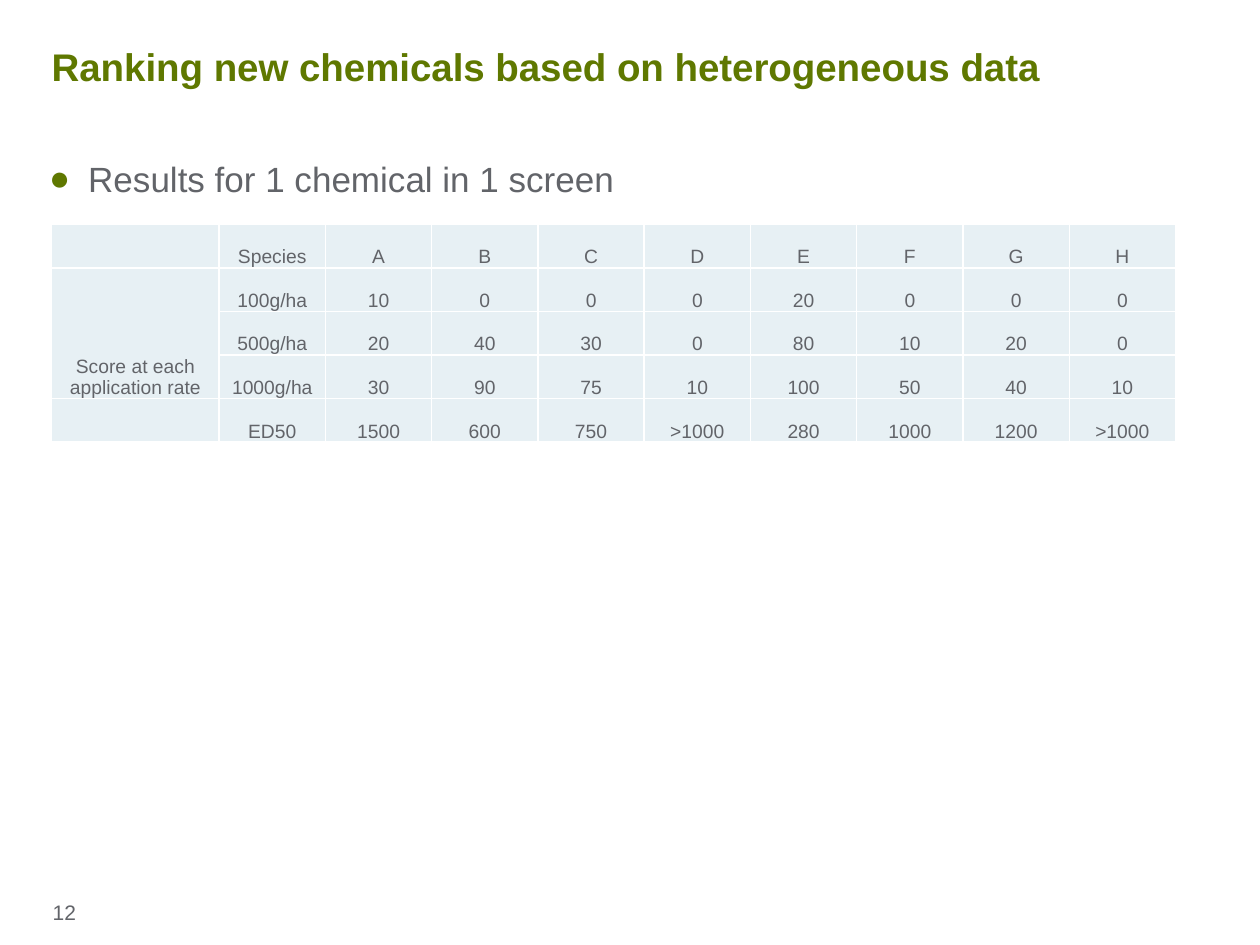
"""Build the slide that ranks new chemicals from one screen."""
from dataclasses import dataclass

from lxml.etree import SubElement
from pptx import Presentation
from pptx.dml.color import RGBColor
from pptx.enum.text import MSO_ANCHOR, MSO_AUTO_SIZE, PP_ALIGN
from pptx.oxml.ns import qn
from pptx.util import Inches, Pt

WIDE, HIGH = Inches(10), Inches(7.5)


@dataclass(frozen=True)
class Theme:
    """Colours, font and type sizes."""
    green: str = "5F7800"
    grey: str = "626469"
    pale: str = "E7F0F4"
    white: str = "FFFFFF"
    font: str = "Arial"
    head: int = 22
    body: int = 20
    foot: int = 12
    cell: int = 11


@dataclass(frozen=True)
class Box:
    """A place in percent of the slide's width and height."""
    left: float
    top: float
    width: float
    height: float

    def place(self) -> tuple:
        """Return left, top, width and height as lengths."""
        return (int(WIDE * self.left / 100), int(HIGH * self.top / 100),
                int(WIDE * self.width / 100), int(HIGH * self.height / 100))


THEME = Theme()
TITLE = Box(4.1, 1.33, 92.4, 11.87)
BODY = Box(3.9, 16.67, 92.5, 68.93)
GRID = Box(4.1, 23.73, 89.2, 23.07)
FOOT = Box(3.2, 94.53, 6.1, 5.47)
LABEL = 13.3

ROWS = [
    ["", "Species", *"ABCDEFGH"],
    ["Score at each application rate", "100g/ha", 10, 0, 0, 0, 20, 0, 0, 0],
    ["", "500g/ha", 20, 40, 30, 0, 80, 10, 20, 0],
    ["", "1000g/ha", 30, 90, 75, 10, 100, 50, 40, 10],
    ["", "ED50", 1500, 600, 750, ">1000", 280, 1000, 1200, ">1000"],
]


def style(para, size: int, color: str, bold: bool = False) -> None:
    """Format every run of a paragraph."""
    for run in para.runs:
        font = run.font
        font.name, font.size, font.bold = THEME.font, Pt(size), bold
        font.color.rgb = RGBColor.from_string(color)


def fill_box(shape, box: Box, text: str):
    """Place a placeholder, set its text and return the paragraph."""
    shape.left, shape.top, shape.width, shape.height = box.place()
    frame = shape.text_frame
    frame.text = text
    frame.word_wrap, frame.auto_size = True, MSO_AUTO_SIZE.NONE
    frame.margin_left = frame.margin_right = 0
    frame.margin_top = frame.margin_bottom = 0
    para = frame.paragraphs[0]
    para.alignment = PP_ALIGN.LEFT
    para.space_before = Pt(0)
    return para


def add_bullet(para, color: str) -> None:
    """Give a paragraph a coloured round bullet."""
    props = para._p.get_or_add_pPr()
    props.set("marL", str(Inches(0.31)))
    props.set("indent", str(-Inches(0.31)))
    tint = SubElement(props, qn("a:buClr"))
    SubElement(tint, qn("a:srgbClr"), val=color)
    SubElement(props, qn("a:buFont"), typeface=THEME.font)
    SubElement(props, qn("a:buChar"), char="●")


def add_lines(cell, color: str) -> None:
    """Draw a one-point line on each side of a cell."""
    props = cell._tc.get_or_add_tcPr()
    for side in "LRTB":
        line = SubElement(props, qn(f"a:ln{side}"), w=str(Pt(1)))
        paint = SubElement(line, qn("a:solidFill"))
        SubElement(paint, qn("a:srgbClr"), val=color)


def fill_cell(cell, text: str) -> None:
    """Write and format one table cell."""
    cell.text = text
    cell.vertical_anchor = MSO_ANCHOR.BOTTOM
    cell.margin_left = cell.margin_right = cell.margin_top = Inches(0.01)
    cell.margin_bottom = 0
    add_lines(cell, THEME.white)
    cell.fill.solid()
    cell.fill.fore_color.rgb = RGBColor.from_string(THEME.pale)
    para = cell.text_frame.paragraphs[0]
    para.alignment = PP_ALIGN.CENTER
    style(para, THEME.cell, THEME.grey)


def add_grid(slide, box: Box, rows: list) -> None:
    """Add the table of scores."""
    count = len(rows[0])
    table = slide.shapes.add_table(len(rows), count, *box.place()).table
    share = (box.width - LABEL) / (count - 1)
    for num, col in enumerate(table.columns):
        col.width = int(WIDE * (share if num else LABEL) / 100)
    for r, row in enumerate(rows):
        for c, value in enumerate(row):
            fill_cell(table.cell(r, c), str(value))
    table.cell(1, 0).merge(table.cell(3, 0))


def main() -> None:
    """Build and save the slide."""
    deck = Presentation()
    deck.slide_width, deck.slide_height = WIDE, HIGH
    slide = deck.slides.add_slide(deck.slide_layouts[1])

    title = slide.shapes.title
    para = fill_box(title, TITLE, "Ranking new chemicals based on heterogeneous data")
    title.text_frame.vertical_anchor = MSO_ANCHOR.MIDDLE
    para.line_spacing = 0.9
    style(para, THEME.head, THEME.green, True)

    para = fill_box(slide.placeholders[1], BODY, "Results for 1 chemical in 1 screen")
    add_bullet(para, THEME.green)
    para.space_after = Pt(5)
    style(para, THEME.body, THEME.grey)

    add_grid(slide, GRID, ROWS)

    foot = slide.shapes.add_textbox(*FOOT.place()).text_frame
    foot.word_wrap = True
    foot.text = "12"
    foot.paragraphs[0].space_after = Pt(6)
    style(foot.paragraphs[0], THEME.foot, THEME.grey)
    deck.save("out.pptx")


if __name__ == "__main__":
    main()
